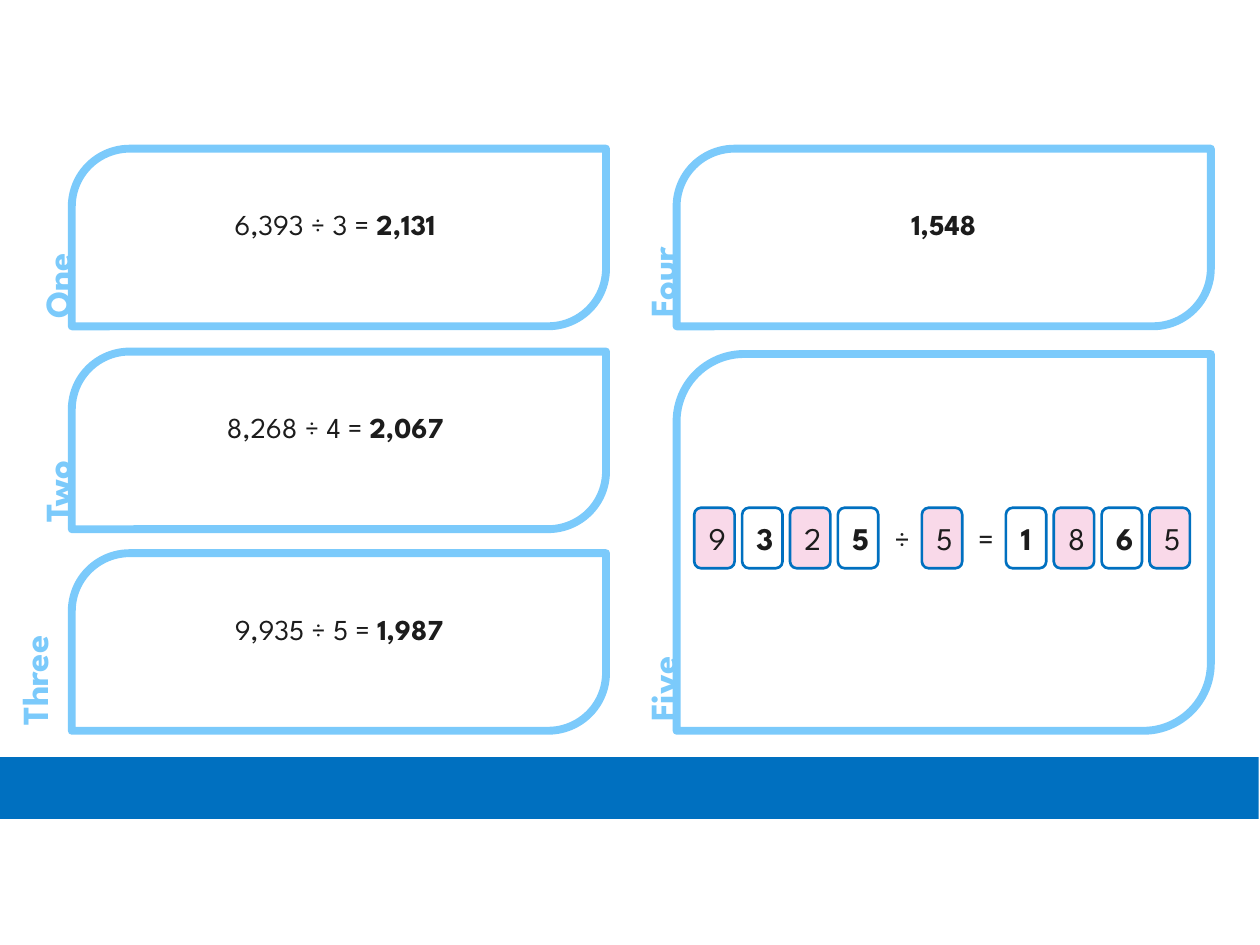
from dataclasses import dataclass

from pptx import Presentation
from pptx import util as u
from pptx.dml.color import RGBColor
from pptx.enum import shapes, text

BLUE = RGBColor(0x00, 0x70, 0xC0)
SKY = RGBColor(0x7B, 0xCA, 0xFB)
PINK = RGBColor(0xF9, 0xD9, 0xE9)
WHITE = RGBColor(0xFF, 0xFF, 0xFF)
INK = RGBColor(0x1C, 0x1C, 0x1C)
FACE = "League Spartan"


@dataclass
class Panel:
    name: str
    left: float
    top: float
    tall: float
    bend: float
    drop: float
    sum: str = ""
    result: str = ""
    deep: float = 0.45


@dataclass
class Cell:
    mark: str
    given: bool = False
    sign: bool = False


PANELS = [
    Panel("One", 0.57, 1.18, 1.41, 0.326, 0.75, "6,393 ÷ 3 = ", "2,131 "),
    Panel("Two", 0.57, 2.79, 1.41, 0.326, 0.76, "8,268 ÷ 4 = ", "2,067 "),
    Panel("Three", 0.57, 4.39, 1.41, 0.326, 0.59, "9,935 ÷ 5 = ", "1,987", 0.81),
    Panel("Four", 5.37, 1.18, 1.41, 0.326, 0.74, "", "1,548"),
    Panel("Five", 5.37, 2.81, 2.99, 0.179, 2.32),
]
CELLS = [
    Cell("9", given=True), Cell("3"), Cell("2", given=True), Cell("5"),
    Cell("÷", sign=True), Cell("5", given=True), Cell("=", sign=True),
    Cell("1"), Cell("8", given=True), Cell("6"), Cell("5", given=True),
]


def write(para, words: str, size: float, color: RGBColor, bold: bool) -> None:
    run = para.add_run()
    run.text = words
    look = {"name": FACE, "size": u.Pt(size), "bold": bold}
    for key, value in look.items():
        setattr(run.font, key, value)
    run.font.color.rgb = color


def add_box(slide, kind, left: float, top: float, wide: float, tall: float,
            fill: RGBColor | None = None, edge: RGBColor | None = None,
            weight: float = 1.5):
    box = slide.shapes.add_shape(
        kind, u.Inches(left), u.Inches(top), u.Inches(wide), u.Inches(tall))
    box.shadow.inherit = False
    if fill is None:
        box.fill.background()
    else:
        box.fill.solid()
        box.fill.fore_color.rgb = fill
    if edge is None:
        box.line.fill.background()
    else:
        box.line.color.rgb = edge
        box.line.width = u.Pt(weight)
    frame = box.text_frame
    frame.vertical_anchor = text.MSO_ANCHOR.MIDDLE
    frame.paragraphs[0].alignment = text.PP_ALIGN.CENTER
    return box


def add_panel(slide, item: Panel) -> None:
    box = add_box(slide, shapes.MSO_SHAPE.ROUND_2_DIAG_RECTANGLE,
                  item.left, item.top, 4.24, item.tall, None, SKY, 4.5)
    box.adjustments[0] = item.bend
    box.adjustments[1] = 0
    box.text_frame.margin_bottom = u.Inches(0.26)
    para = box.text_frame.paragraphs[0]
    for words, bold in ((item.sum, False), (item.result, True)):
        if words:
            write(para, words, 16.5, INK, bold)


def add_label(slide, item: Panel) -> None:
    box = slide.shapes.add_textbox(
        u.Inches(item.left - 0.59), u.Inches(item.top + item.drop),
        u.Inches(0.94), u.Inches(item.deep))
    box.rotation = 270
    look = {"word_wrap": True, "auto_size": text.MSO_AUTO_SIZE.SHAPE_TO_FIT_TEXT}
    for key, value in look.items():
        setattr(box.text_frame, key, value)
    write(box.text_frame.paragraphs[0], item.name, 21, SKY, True)


def add_cells(slide, left: float, top: float) -> None:
    for cell, after in zip(CELLS, CELLS[1:] + [None]):
        fill = None if cell.sign else PINK if cell.given else WHITE
        box = add_box(slide, shapes.MSO_SHAPE.ROUNDED_RECTANGLE,
                      left, top, 0.32, 0.48, fill, None if cell.sign else BLUE)
        bold = not (cell.given or cell.sign)
        write(box.text_frame.paragraphs[0], cell.mark, 18, INK, bold)
        near = cell.sign or (after is not None and after.sign)
        left += 1 / 3 if near else 0.38


def main() -> None:
    deck = Presentation()
    deck.slide_width = u.Inches(10)
    deck.slide_height = u.Inches(7.5)
    slide = deck.slides.add_slide(deck.slide_layouts[6])
    add_box(slide, shapes.MSO_SHAPE.RECTANGLE, -0.01, 6.01, 10, 0.49, BLUE)
    for item in PANELS:
        add_panel(slide, item)
    for item in PANELS:
        add_label(slide, item)
    add_cells(slide, 5.51, 4.03)
    deck.save("out.pptx")


if __name__ == "__main__":
    main()
